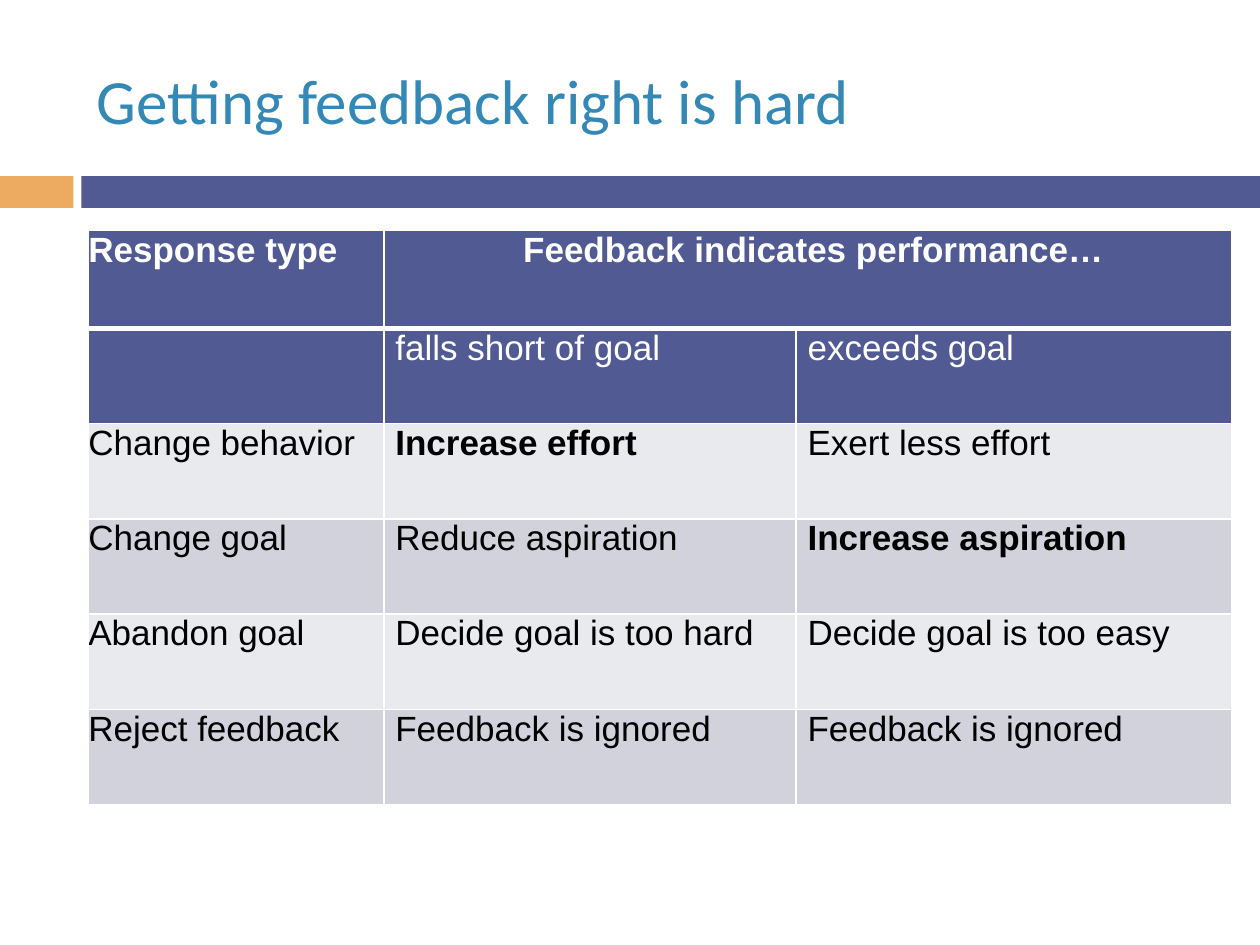
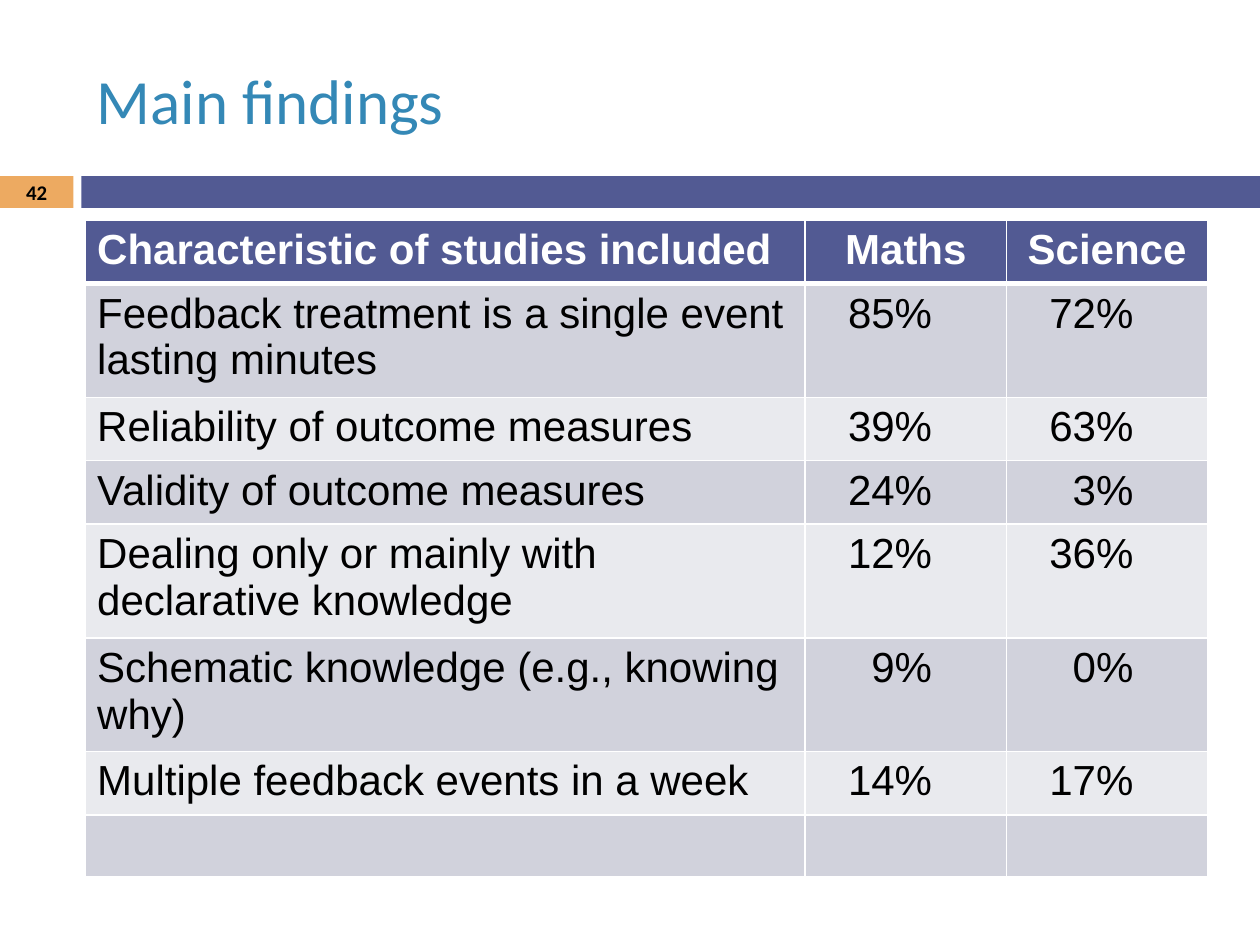
from dataclasses import dataclass

from lxml.etree import SubElement
from pptx import Presentation
from pptx.dml.color import RGBColor
from pptx.enum.shapes import MSO_SHAPE
from pptx.enum.text import MSO_ANCHOR, PP_ALIGN
from pptx.oxml.ns import qn
from pptx.presentation import Presentation as Deck
from pptx.slide import Slide
from pptx.table import Table, _Cell
from pptx.text.text import TextFrame
from pptx.util import Cm, Pt

INDIGO = "525A93"
ORANGE = "EDAA61"
TITLE_BLUE = "3488B6"
WHITE = "FFFFFF"
BLACK = "000000"
ROW_COLORS = ("E9EAEE", "D1D2DC")


@dataclass(frozen=True)
class Box:
    left: float
    top: float
    width: float
    height: float

    def lengths(self) -> tuple[Cm, Cm, Cm, Cm]:
        return Cm(self.left), Cm(self.top), Cm(self.width), Cm(self.height)


@dataclass(frozen=True)
class TextStyle:
    size: float
    color: str
    font: str = "Arial"
    bold: bool = False
    align: PP_ALIGN = PP_ALIGN.LEFT
    space_after: float = 0


@dataclass(frozen=True)
class Margins:
    left: float = 0.25
    top: float = 0.13
    right: float = 0.25
    bottom: float = 0.13


@dataclass(frozen=True)
class Band:
    box: Box
    color: str


@dataclass(frozen=True)
class Grid:
    left: float
    top: float
    widths: tuple[float, ...]
    heights: tuple[float, ...]
    rows: tuple[tuple[str, ...], ...]
    header_rows: int = 1


BANDS = (
    Band(Box(0, 3.55, 1.48, 0.64), ORANGE),
    Band(Box(1.64, 3.55, 23.76, 0.64), INDIGO),
)
TITLE_BOX = Box(1.7, 0.64, 22.66, 2.74)
TITLE_STYLE = TextStyle(36, TITLE_BLUE, "Calibri")
NUMBER_BOX = Box(0, 3.53, 1.48, 0.69)
NUMBER_STYLE = TextStyle(11.9, BLACK, "Calibri", True, PP_ALIGN.CENTER)

RESPONSES = Grid(
    left=1.78,
    top=4.65,
    widths=(5.96, 8.31, 8.78),
    heights=(1.97,) + (1.92,) * 5,
    rows=(
        ("Response type", "Feedback indicates performance…", ""),
        ("", "falls short of goal", "exceeds goal"),
        ("Change behavior", "Increase effort", "Exert less effort"),
        ("Change goal", "Reduce aspiration", "Increase aspiration"),
        ("Abandon goal", "Decide goal is too hard", "Decide goal is too easy"),
        ("Reject feedback", "Feedback is ignored", "Feedback is ignored"),
    ),
    header_rows=2,
)
LIKELY_RESPONSES = ("Increase effort", "Increase aspiration")

ONE_LINE = 1.2
TWO_LINES = 2.15
FINDINGS = Grid(
    left=1.71,
    top=4.44,
    widths=(14.52, 4.06, 4.06),
    heights=(
        ONE_LINE,
        TWO_LINES,
        ONE_LINE,
        ONE_LINE,
        TWO_LINES,
        TWO_LINES,
        ONE_LINE,
        1.25,
    ),
    rows=(
        ("Characteristic of studies included", "Maths", "Science"),
        ("Feedback treatment is a single event lasting minutes", "85%", "72%"),
        ("Reliability of outcome measures", "39%", "63%"),
        ("Validity of outcome measures", "24%", "3%"),
        ("Dealing only or mainly with declarative knowledge", "12%", "36%"),
        ("Schematic knowledge (e.g., knowing why)", "9%", "0%"),
        ("Multiple feedback events in a week", "14%", "17%"),
        ("", "", ""),
    ),
)


def rgb(color: str) -> RGBColor:
    return RGBColor.from_string(color)


def write_text(frame: TextFrame, text: str, style: TextStyle) -> None:
    paragraph = frame.paragraphs[0]
    paragraph.alignment = style.align
    paragraph.space_after = Pt(style.space_after)
    run = paragraph.add_run()
    run.text = text
    run.font.name = style.font
    run.font.size = Pt(style.size)
    run.font.bold = style.bold
    run.font.color.rgb = rgb(style.color)


def add_text(slide: Slide, box: Box, text: str, style: TextStyle, margins: Margins) -> None:
    frame = slide.shapes.add_textbox(*box.lengths()).text_frame
    frame.word_wrap = True
    frame.vertical_anchor = MSO_ANCHOR.MIDDLE
    set_margins(frame, margins)
    write_text(frame, text, style)


def set_margins(target: TextFrame | _Cell, margins: Margins) -> None:
    target.margin_left = Cm(margins.left)
    target.margin_top = Cm(margins.top)
    target.margin_right = Cm(margins.right)
    target.margin_bottom = Cm(margins.bottom)


def add_band(slide: Slide, band: Band) -> None:
    shape = slide.shapes.add_shape(MSO_SHAPE.RECTANGLE, *band.box.lengths())
    shape.shadow.inherit = False
    shape.fill.solid()
    shape.fill.fore_color.rgb = rgb(band.color)
    shape.line.fill.background()


def set_borders(cell: _Cell, top: float, bottom: float) -> None:
    properties = cell._tc.get_or_add_tcPr()
    widths = {"a:lnL": 1, "a:lnR": 1, "a:lnT": top, "a:lnB": bottom}
    for position, (tag, width) in enumerate(widths.items()):
        line = SubElement(properties, qn(tag), w=str(Pt(width)))
        fill = SubElement(line, qn("a:solidFill"))
        SubElement(fill, qn("a:srgbClr"), val=WHITE)
        properties.insert(position, line)


def add_grid(slide: Slide, grid: Grid) -> Table:
    box = Box(grid.left, grid.top, sum(grid.widths), sum(grid.heights))
    table = slide.shapes.add_table(
        len(grid.heights), len(grid.widths), *box.lengths()
    ).table
    for column, width in zip(table.columns, grid.widths):
        column.width = Cm(width)
    for row_index, (row, height) in enumerate(zip(table.rows, grid.heights)):
        row.height = Cm(height)
        is_header = row_index < grid.header_rows
        color = INDIGO if is_header else ROW_COLORS[row_index % 2]
        for cell in row.cells:
            cell.fill.solid()
            cell.fill.fore_color.rgb = rgb(color)
            set_borders(
                cell,
                top=3 if row_index == 1 else 1,
                bottom=3 if row_index == 0 else 1,
            )
    return table


def start_slide(presentation: Deck, title: str) -> Slide:
    slide = presentation.slides.add_slide(presentation.slide_layouts[6])
    for band in BANDS:
        add_band(slide, band)
    add_text(slide, TITLE_BOX, title, TITLE_STYLE, Margins())
    return slide


def build_responses(presentation: Deck) -> None:
    slide = start_slide(presentation, "Getting feedback right is hard")
    table = add_grid(slide, RESPONSES)
    table.cell(0, 1).merge(table.cell(0, 2))
    for row_index, texts in enumerate(RESPONSES.rows):
        for column_index, text in enumerate(texts):
            if not text:
                continue
            cell = table.cell(row_index, column_index)
            set_margins(cell, Margins(0.23 if column_index else 0, 0, 0, 0))
            style = TextStyle(
                size=20,
                color=WHITE if row_index < RESPONSES.header_rows else BLACK,
                bold=row_index == 0 or text in LIKELY_RESPONSES,
                align=PP_ALIGN.CENTER if (row_index, column_index) == (0, 1) else PP_ALIGN.LEFT,
                space_after=4,
            )
            write_text(cell.text_frame, text, style)


def build_findings(presentation: Deck) -> None:
    slide = start_slide(presentation, "Main findings")
    add_text(slide, NUMBER_BOX, "42", NUMBER_STYLE, Margins(0, 0, 0, 0))
    table = add_grid(slide, FINDINGS)
    for row_index, texts in enumerate(FINDINGS.rows):
        is_header = row_index == 0
        number_align = PP_ALIGN.CENTER if is_header else PP_ALIGN.RIGHT
        for column_index, text in enumerate(texts):
            if not text:
                continue
            cell = table.cell(row_index, column_index)
            is_value = column_index > 0 and not is_header
            set_margins(cell, Margins(right=1.5 if is_value else 0.25))
            style = TextStyle(
                size=24,
                color=WHITE if is_header else BLACK,
                bold=is_header,
                align=number_align if column_index else PP_ALIGN.LEFT,
            )
            write_text(cell.text_frame, text, style)


def main() -> None:
    presentation = Presentation()
    presentation.slide_width = Cm(25.4)
    presentation.slide_height = Cm(19.05)
    build_responses(presentation)
    build_findings(presentation)
    presentation.save("out.pptx")


if __name__ == "__main__":
    main()
